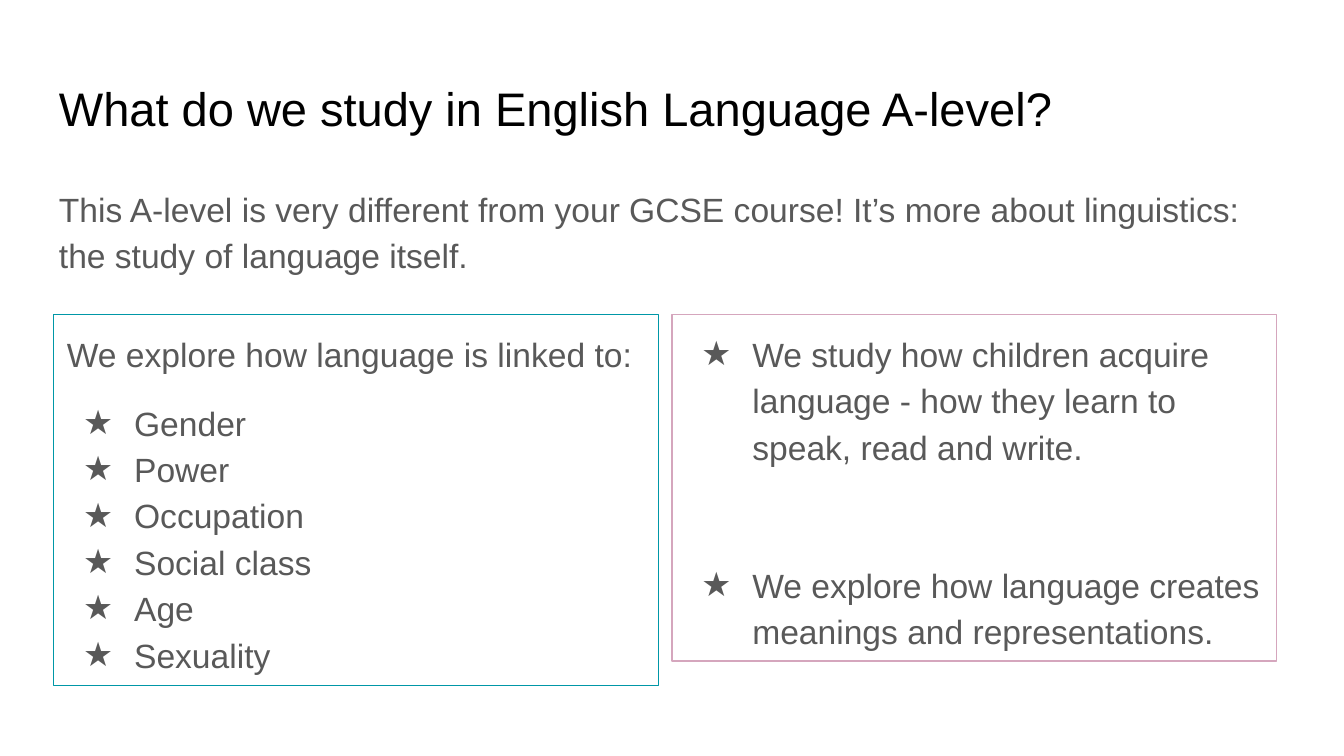
import pptx
import pptx.dml.color
import pptx.enum.shapes
import pptx.enum.text
import pptx.oxml.ns
import pptx.util
from lxml import etree
from pptx.util import Inches

FONT = "Arial"
GREY = "595959"
TEAL = "0097A7"
PINK = "D5A6BD"
MARGIN = 0.1
LINE_SPACING = 1.15

TITLE = "What do we study in English Language A-level?"
INTRO = ("This A-level is very different from your GCSE course! "
         "It’s more about linguistics: the study of language itself.")
TOPICS_HEADING = "We explore how language is linked to:"
TOPICS = ["Gender", "Power", "Occupation", "Social class", "Age", "Sexuality"]
STUDIES = [
    "We study how children acquire language - how they learn to speak, read and write.",
    "We explore how language creates meanings and representations.",
]


def color(value):
    return pptx.dml.color.RGBColor.from_string(value)


def add_star(para, fill):
    """Give the paragraph a hanging star bullet."""
    properties = para._p.get_or_add_pPr()
    properties.set("marL", str(Inches(0.5)))
    properties.set("indent", str(Inches(-0.38)))
    qn = pptx.oxml.ns.qn
    bullet_color = etree.SubElement(properties, qn("a:buClr"))
    etree.SubElement(bullet_color, qn("a:srgbClr")).set("val", fill)
    etree.SubElement(properties, qn("a:buFont")).set("typeface", FONT)
    etree.SubElement(properties, qn("a:buChar")).set("char", "★")


def write(frame, text, size=18, fill=GREY, spacing=LINE_SPACING, before=0, star=False):
    """Add one paragraph, using the empty first one if it is free."""
    first = frame.paragraphs[0]
    para = frame.add_paragraph() if first.runs else first
    para.alignment = pptx.enum.text.PP_ALIGN.LEFT
    para.line_spacing = spacing
    if before:
        para.space_before = pptx.util.Pt(before)
    if star:
        add_star(para, fill)
    span = para.add_run()
    span.text = text
    span.font.name = FONT
    span.font.size = pptx.util.Pt(size)
    span.font.color.rgb = color(fill)


def prepare_frame(shape):
    frame = shape.text_frame
    frame.word_wrap = True
    frame.vertical_anchor = pptx.enum.text.MSO_ANCHOR.TOP
    frame.margin_left = frame.margin_right = Inches(MARGIN)
    frame.margin_top = frame.margin_bottom = Inches(MARGIN)
    return frame


def add_text_box(page, left, top, width, height):
    box = page.shapes.add_textbox(*map(Inches, (left, top, width, height)))
    return prepare_frame(box)


def add_outlined_box(page, left, top, width, height, outline):
    box = page.shapes.add_shape(pptx.enum.shapes.MSO_SHAPE.RECTANGLE,
                                *map(Inches, (left, top, width, height)))
    box.shadow.inherit = False
    box.fill.background()
    box.line.color.rgb = color(outline)
    box.line.width = pptx.util.Pt(0.75)
    return prepare_frame(box)


def add_header(page, left, top):
    title = add_text_box(page, left, top, 9.32, 0.63)
    write(title, TITLE, size=25.2, fill="000000", spacing=1.0)
    intro = add_text_box(page, left, top + 0.77, 9.21, 0.98)
    write(intro, INTRO)


def add_topics(page, left, top, width, height):
    frame = add_outlined_box(page, left, top, width, height, TEAL)
    write(frame, TOPICS_HEADING)
    for index, topic in enumerate(TOPICS):
        write(frame, topic, before=0 if index else 12, star=True)


def add_studies(page, left, top, width, height):
    frame = add_outlined_box(page, left, top, width, height, PINK)
    for index, study in enumerate(STUDIES):
        write(frame, study, before=49 if index else 0, star=True)


def main():
    deck = pptx.Presentation()
    deck.slide_width = Inches(10)
    deck.slide_height = Inches(10 * 9 / 16)
    page = deck.slides.add_slide(deck.slide_layouts[6])
    add_header(page, 0.34, 0.49)
    left, top, width, gap = 0.4, 2.34, 4.5, 0.1
    add_topics(page, left, top, width, 2.76)
    add_studies(page, left + width + gap, top, width, 2.58)
    deck.save("out.pptx")


if __name__ == "__main__":
    main()
